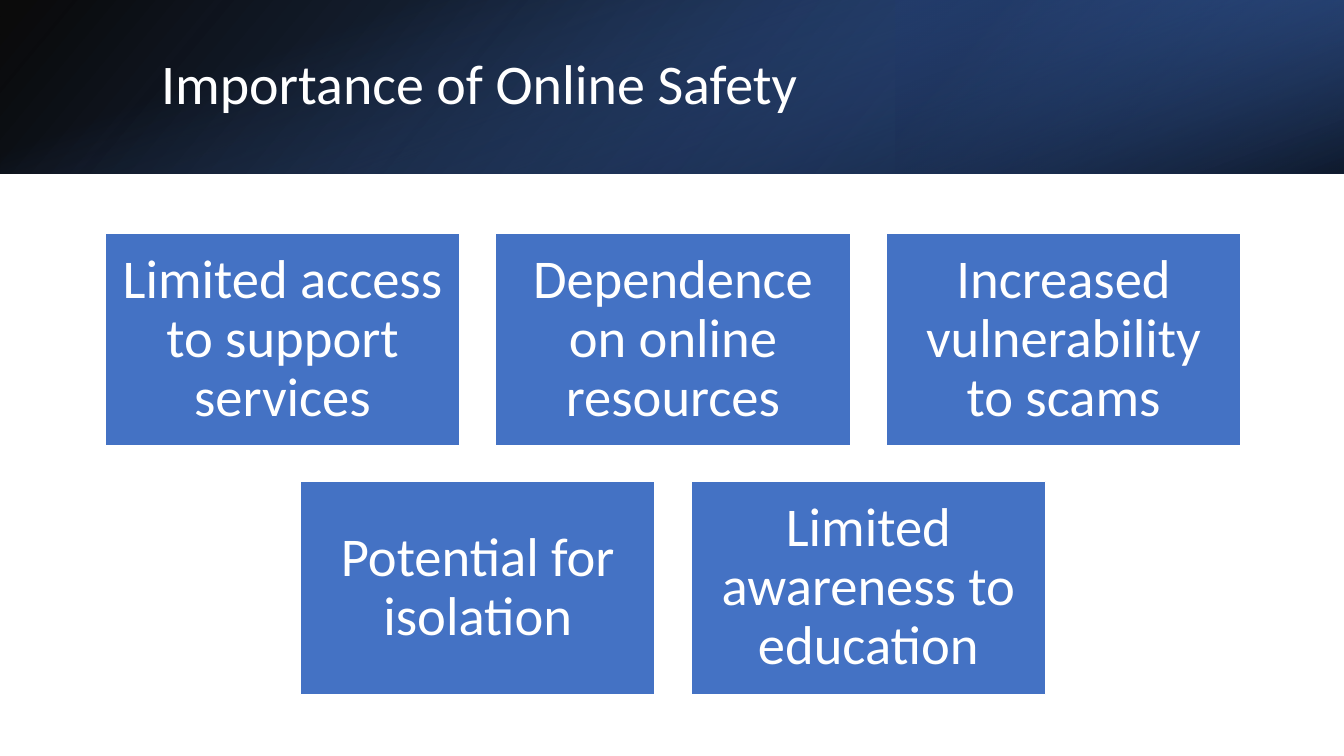
from lxml.etree import SubElement
from pptx import Presentation
from pptx.dml.color import RGBColor
from pptx.enum.shapes import MSO_SHAPE as Preset
from pptx.enum.text import MSO_ANCHOR as Anchor, PP_ALIGN as Align
from pptx.oxml.ns import qn
from pptx.util import Pt

WIDTH, HEIGHT = 960, 540
FONT = "Calibri"
WHITE, BLUE, BLACK = "FFFFFF", "4472C4", "000000"
CARD_ROWS = [
    [
        "Limited access to support services",
        "Dependence on online resources",
        "Increased vulnerability to scams",
    ],
    ["Potential for isolation", "Limited awareness to education"],
]


def color(hex_code):
    return RGBColor.from_string(hex_code)


def add_rectangle(page, box):
    shape = page.shapes.add_shape(Preset.RECTANGLE, *map(Pt, box))
    shape.shadow.inherit = False
    return shape


def write_text(shape, text, size, align=Align.LEFT, inset=(7.2, 3.6)):
    frame = shape.text_frame
    frame.word_wrap = True
    frame.vertical_anchor = Anchor.MIDDLE
    frame.margin_left = frame.margin_right = Pt(inset[0])
    frame.margin_top = frame.margin_bottom = Pt(inset[1])
    para = frame.paragraphs[0]
    para.alignment = align
    para.line_spacing = 0.9
    span = para.add_run()
    span.text = text
    span.font.name = FONT
    span.font.size = Pt(size)
    span.font.color.rgb = color(WHITE)


def add_gradient(page, box, stops, angle, rotation=0, flip=False):
    """Stops are (position, colour, opacity), all but colour in percent."""
    shape = add_rectangle(page, box)
    shape.rotation = rotation
    shape.line.fill.background()
    shape.fill.gradient()
    properties = shape._element.spPr
    if flip:
        properties.find(qn("a:xfrm")).set("flipH", "1")
    gradient = properties.find(qn("a:gradFill"))
    for child in list(gradient):
        gradient.remove(child)
    stop_list = SubElement(gradient, qn("a:gsLst"))
    for position, hex_code, opacity in stops:
        stop = SubElement(stop_list, qn("a:gs"), pos=str(position * 1000))
        tone = SubElement(stop, qn("a:srgbClr"), val=hex_code)
        SubElement(tone, qn("a:alpha"), val=str(opacity * 1000))
    SubElement(gradient, qn("a:lin"), ang=str(angle * 60000), scaled="0")


def add_header(page, box, title):
    left, top, width, height = box
    # Layered gradients: base, right-hand glow, lower shade
    add_gradient(page, box, [(0, BLACK, 96), (100, "2F5597", 100)], 140, flip=True)
    glow = (left + width * 2 / 3, top, width / 3, height)
    add_gradient(page, glow, [(19, "203864", 68), (100, BLUE, 79)], 320,
                 rotation=180, flip=True)
    # The shade is a tall box turned a quarter about the band's centre
    offset = (width - height) / 2
    shade = (left + offset, top - offset, height, width)
    add_gradient(page, shade, [(23, BLUE, 0), (99, BLACK, 74)], 340, rotation=90)
    # Title
    title_box = (left + 108, top + 27.5, 790, 69)
    write_text(page.shapes.add_textbox(*map(Pt, title_box)), title, 40)


def add_cards(page, box, rows, gap=25.4):
    left, top, width, height = box
    card_width = (width - gap * (len(rows[0]) - 1)) / len(rows[0])
    card_height = (height - gap * (len(rows) - 1)) / len(rows)
    for row, labels in enumerate(rows):
        # Every row is centred in the box
        row_width = len(labels) * (card_width + gap) - gap
        row_left = left + (width - row_width) / 2
        for column, label in enumerate(labels):
            card = add_rectangle(page, (
                row_left + column * (card_width + gap),
                top + row * (card_height + gap),
                card_width, card_height))
            card.fill.solid()
            card.fill.fore_color.rgb = color(BLUE)
            card.line.color.rgb = color(WHITE)
            card.line.width = Pt(1)
            write_text(card, label, 39, align=Align.CENTER, inset=(11.7, 11.7))


def main():
    deck = Presentation()
    deck.slide_width, deck.slide_height = Pt(WIDTH), Pt(HEIGHT)
    page = deck.slides.add_slide(deck.slide_layouts[6])
    add_header(page, (0, 0, WIDTH, 124), "Importance of Online Safety")
    add_cards(page, (75, 166.5, 811.5, 329.5), CARD_ROWS)
    deck.save("out.pptx")


if __name__ == "__main__":
    main()
